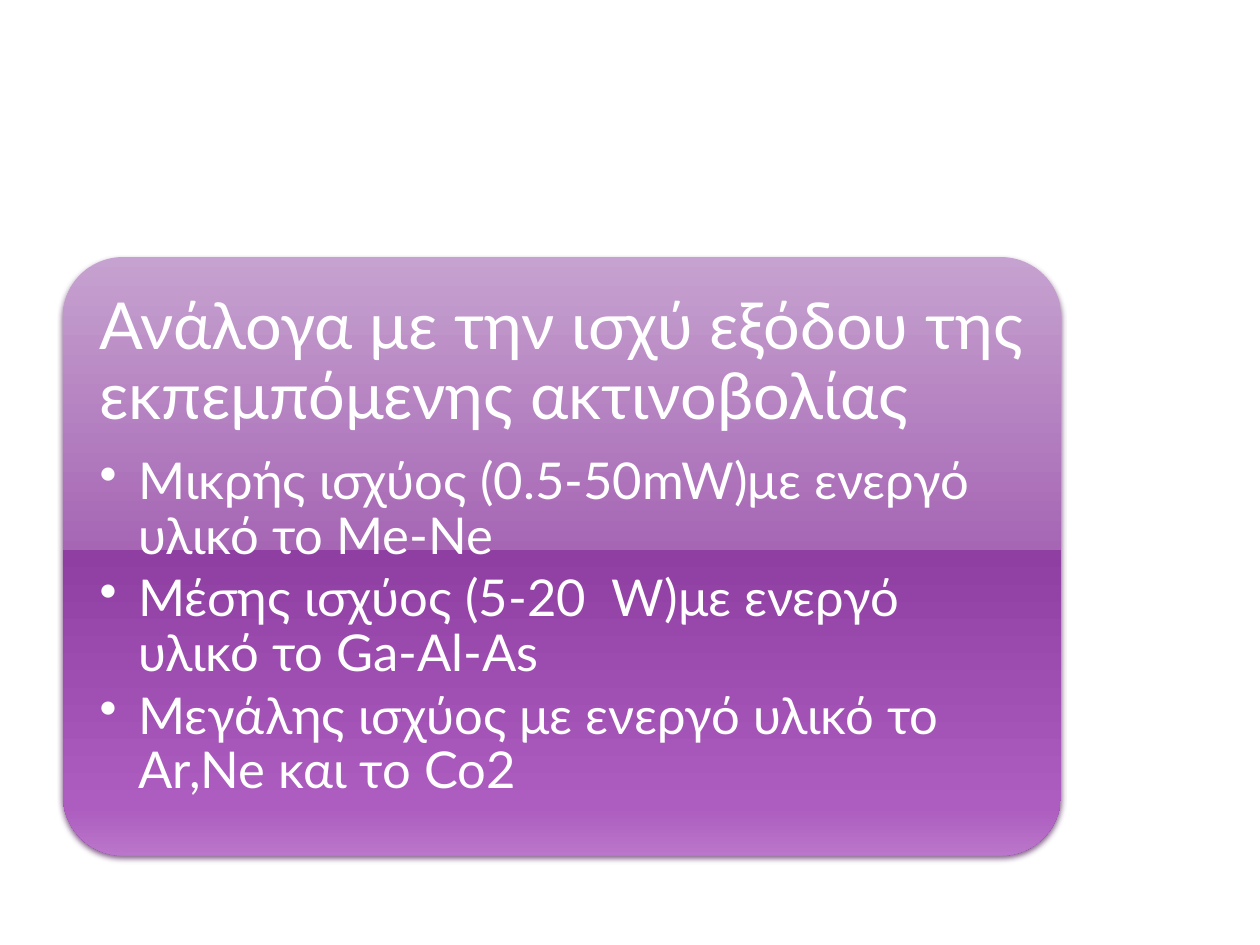
import pptx
import pptx.util
import pptx.dml.color
import pptx.enum.shapes
import pptx.enum.text
import pptx.oxml
import pptx.oxml.ns
from dataclasses import dataclass
from pptx.util import Inches


@dataclass(frozen=True)
class Theme:
    font: str = "Lato"
    text: str = "FFFFFF"
    heading_size: int = 37
    bullet_size: int = 29
    gradient: tuple = ((0, "C6A2D0"), (49, "A666B4"), (49, "8F3EA1"),
                       (92, "AD5DBF"), (100, "BA76CA"))
    shadow: str = "6A3F73"


THEME = Theme()
HEADING = "Ανάλογα με την ισχύ εξόδου της εκπεμπόμενης ακτινοβολίας"
BULLETS = (
    "Μικρής ισχύος (0.5-50mW)με ενεργό υλικό το Me-Ne",
    "Μέσης ισχύος (5-20  W)με ενεργό υλικό το Ga-Al-As",
    "Μεγάλης ισχύος με ενεργό υλικό το Ar,Ne και το Co2",
)
NS = pptx.oxml.ns.nsdecls("a")


def apply(target, values):
    for name, value in values.items():
        setattr(target, name, value)


def style_panel(sp):
    """Vertical gradient and a soft shadow below."""
    sp.line.fill.background()
    sp.shadow.inherit = False
    stops = "".join(
        f'<a:gs pos="{pos * 1000}"><a:srgbClr val="{color}"/></a:gs>'
        for pos, color in THEME.gradient)
    gradient = pptx.oxml.parse_xml(
        f'<a:gradFill {NS} rotWithShape="1"><a:gsLst>{stops}</a:gsLst>'
        '<a:lin ang="5400000" scaled="0"/></a:gradFill>')
    shadow = pptx.oxml.parse_xml(
        f'<a:outerShdw {NS} blurRad="{pptx.util.Pt(3.1)}" dist="{pptx.util.Pt(2)}" '
        f'dir="5400000" rotWithShape="0"><a:srgbClr val="{THEME.shadow}">'
        '<a:alpha val="83000"/></a:srgbClr></a:outerShdw>')
    props = sp.fill._xPr
    props.find(pptx.oxml.ns.qn("a:prstGeom")).addnext(gradient)
    props.find(pptx.oxml.ns.qn("a:effectLst")).append(shadow)


def add_paragraph(p, text, size, space_after, bullet=False):
    apply(p, {"line_spacing": 0.9, "space_before": pptx.util.Pt(0),
              "space_after": pptx.util.Pt(round(size * space_after, 1)),
              "alignment": pptx.enum.text.PP_ALIGN.LEFT})
    if bullet:
        p.level = 1
        pPr = p._p.get_or_add_pPr()
        pPr.set("marL", str(Inches(0.31)))
        pPr.set("indent", str(Inches(-0.31)))
        pPr.append(pptx.oxml.parse_xml(f'<a:buChar {NS} char="•"/>'))
    r = p.add_run()
    r.text = text
    apply(r.font, {"name": THEME.font, "size": pptx.util.Pt(size)})
    r.font.color.rgb = pptx.dml.color.RGBColor.from_string(THEME.text)


def add_card(s, left, top, width, height):
    """Rounded panel with a heading and its bullets."""
    group = s.shapes.add_group_shape()

    # Panel
    sp = group.shapes.add_shape(
        pptx.enum.shapes.MSO_SHAPE.ROUNDED_RECTANGLE, left, top, width, height)
    sp.adjustments[0] = 0.1
    style_panel(sp)

    # Text
    pad = Inches(0.14)
    box = group.shapes.add_textbox(
        left + pad, top + pad, width - 2 * pad, height - 2 * pad)
    tf = box.text_frame
    inset = Inches(0.15)
    apply(tf, {"word_wrap": True,
               "vertical_anchor": pptx.enum.text.MSO_ANCHOR.TOP,
               "margin_left": inset, "margin_right": inset,
               "margin_top": inset, "margin_bottom": inset})
    add_paragraph(tf.paragraphs[0], HEADING, THEME.heading_size, 0.35)
    for text in BULLETS:
        add_paragraph(tf.add_paragraph(), text, THEME.bullet_size, 0.15, bullet=True)


def main():
    prs = pptx.Presentation()
    apply(prs, {"slide_width": Inches(10), "slide_height": Inches(7.5)})
    s = prs.slides.add_slide(prs.slide_layouts[6])
    add_card(s, Inches(0.5), Inches(2.04), Inches(7.92), Inches(4.75))
    prs.save("out.pptx")


if __name__ == "__main__":
    main()
